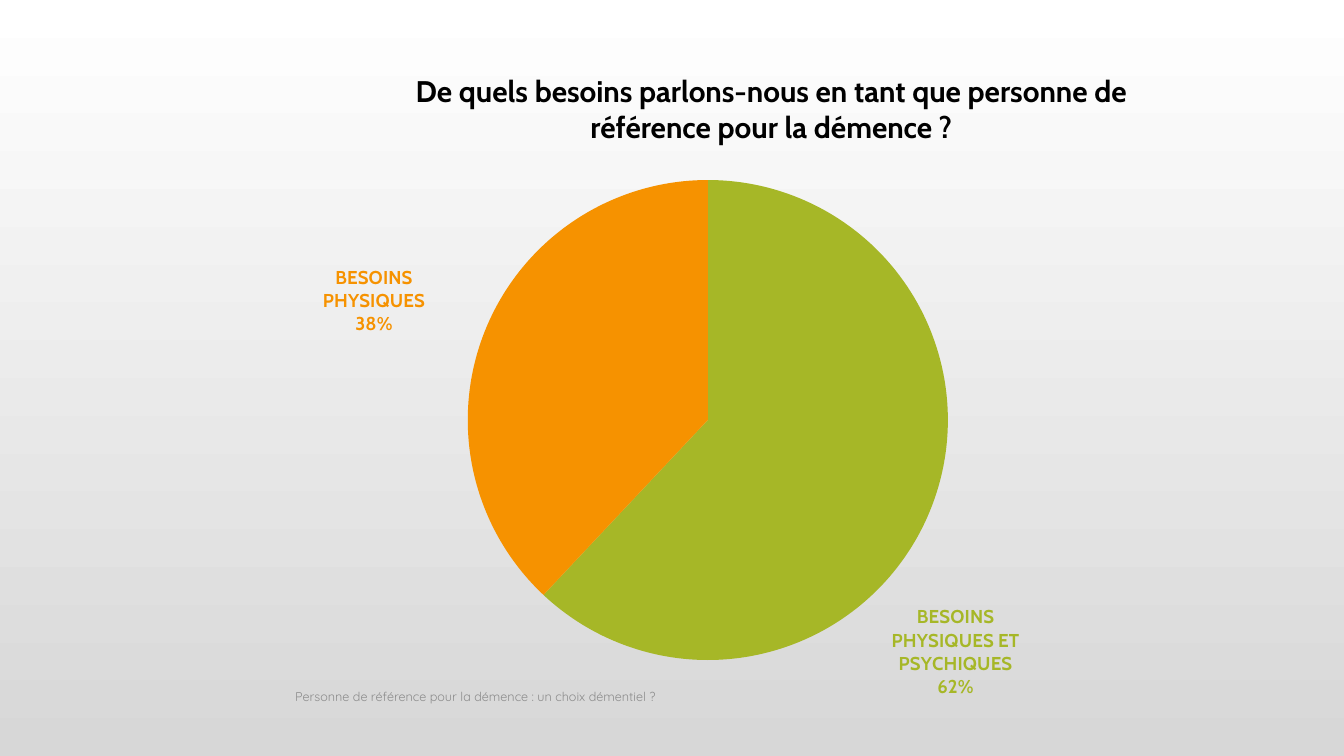
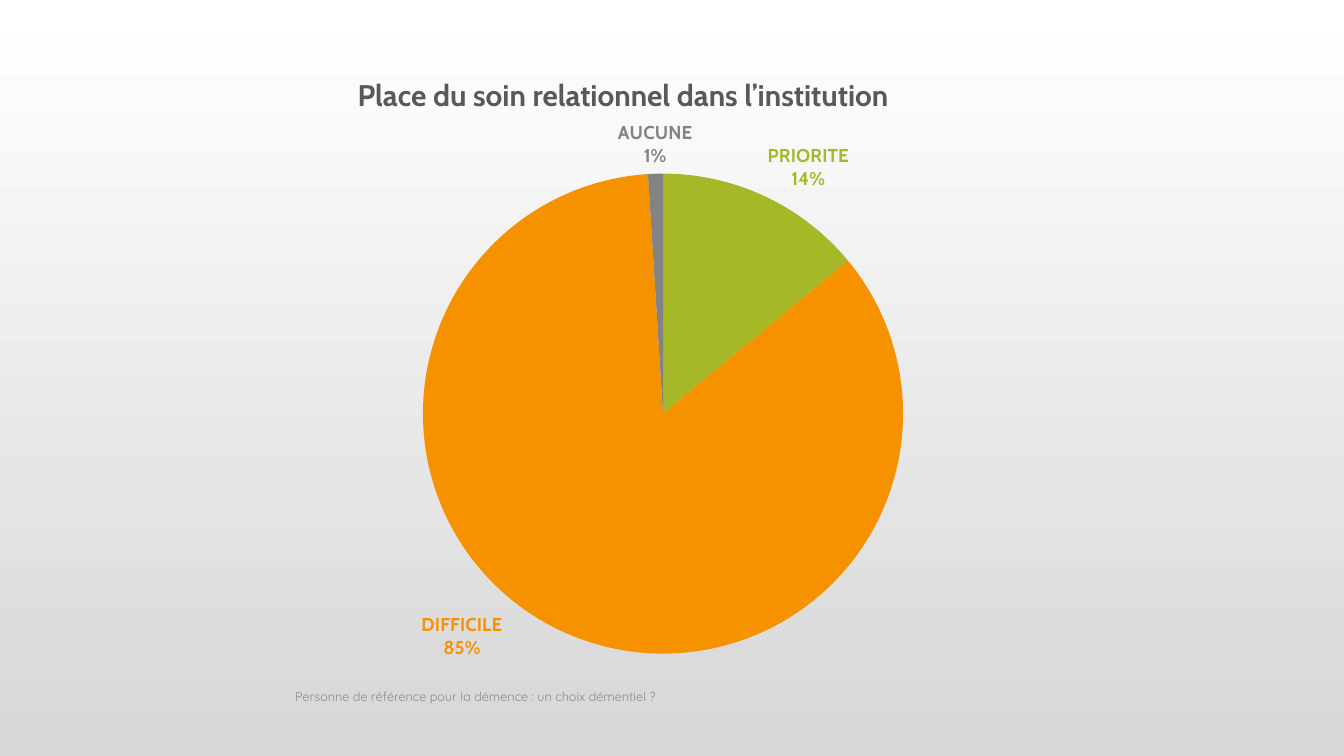
from dataclasses import dataclass

from lxml import etree
from pptx import Presentation
from pptx import util as u
from pptx.chart.data import CategoryChartData
from pptx.dml.color import RGBColor
from pptx.enum import chart as ch, text
from pptx.oxml.ns import qn


@dataclass(frozen=True)
class Theme:
    heading: str = "Cabin"
    body: str = "Quicksand"
    black: str = "000000"
    dark: str = "595959"
    muted: str = "8C8C8C"
    slices: tuple = ("A6B727", "F69200", "838383")
    background: tuple = ("FFFFFF", "D7D7D7")
    title_size: float = 21.3
    label_size: float = 13.3
    chart_size: float = 10
    footer_size: float = 9


T = Theme()
CHART_BOX = (2.22, 0.58, 8.89, 6.35)
FOOTER_BOX = (2.83, 6.71, 8.33, 0.4)
FOOTER = "Personne de référence pour la démence : un choix démentiel ?"
PLOT_SIZE = (0.84, 0.75)

# Each slice: category, value, label offset as fractions of the chart (None = automatic)
SLIDES = [
    dict(
        title="De quels besoins parlons-nous en tant que personne de référence pour la démence ?",
        title_box=(4.05, 0.72, 7.2, 0.8),
        title_color=T.black,
        plot_at=(0.12, 0.19),
        slices=[
            ("BESOINS PHYSIQUES ET PSYCHIQUES", 62, (-0.05, 0.15)),
            ("BESOINS PHYSIQUES", 38, (-0.06, 0.01)),
        ],
    ),
    dict(
        title="Place du soin relationnel dans l’institution",
        title_box=(2.58, 0.76, 7.2, 0.4),
        title_color=T.dark,
        plot_at=(0.07, 0.18),
        slices=[
            ("PRIORITE", 14, None),
            ("DIFFICILE", 85, (-0.07, -0.04)),
            ("AUCUNE", 1, None),
        ],
    ),
]


def inches(box):
    return [u.Inches(v) for v in box]


def style_font(font, name, size, color, bold=False):
    font.name, font.size, font.bold = name, u.Pt(size), bold
    font.color.rgb = RGBColor.from_string(color)


def set_background(master):
    fill = master.background.fill
    fill.gradient()
    fill.gradient_angle = 270
    for stop, color in zip(fill.gradient_stops, T.background):
        stop.color.rgb = RGBColor.from_string(color)


def fill_text(sp, box, content, anchor, align, **font):
    sp.left, sp.top, sp.width, sp.height = inches(box)
    tf = sp.text_frame
    tf.word_wrap = True
    tf.auto_size = text.MSO_AUTO_SIZE.NONE
    tf.vertical_anchor = anchor
    p = tf.paragraphs[0]
    p.alignment = align
    r = p.add_run()
    r.text = content
    style_font(r.font, **font)
    return tf


def add_title(s, content, box, color):
    tf = fill_text(s.shapes.title, box, content, text.MSO_ANCHOR.TOP, text.PP_ALIGN.CENTER,
                   name=T.heading, size=T.title_size, color=color, bold=True)
    tf.margin_left = tf.margin_right = tf.margin_top = tf.margin_bottom = 0


def add_footer(s, box):
    fill_text(s.shapes.add_textbox(*inches(box)), box, FOOTER,
              text.MSO_ANCHOR.MIDDLE, text.PP_ALIGN.LEFT,
              name=T.body, size=T.footer_size, color=T.muted)


def manual_layout(**values):
    layout = etree.Element(qn("c:layout"))
    manual = etree.SubElement(layout, qn("c:manualLayout"))
    for tag, value in values.items():
        etree.SubElement(manual, qn(f"c:{tag}")).set("val", str(value))
    return layout


def place_plot(chart, at):
    area = chart.element.find(".//" + qn("c:plotArea"))
    for old in area.findall(qn("c:layout")):
        area.remove(old)
    area.insert(0, manual_layout(layoutTarget="inner", xMode="edge", yMode="edge",
                                 x=at[0], y=at[1], w=PLOT_SIZE[0], h=PLOT_SIZE[1]))


def finish_labels(chart, offsets):
    """Show category over percentage, shift labels and drop leader lines."""
    for label, offset in zip(chart.element.iter(qn("c:dLbl")), offsets):
        for tag, value in (("showVal", "0"), ("showCatName", "1"), ("showPercent", "1")):
            label.find(qn(f"c:{tag}")).set("val", value)
        etree.SubElement(label, qn("c:separator")).text = "\n"
        if offset:
            label.insert(1, manual_layout(x=offset[0], y=offset[1]))
    for lines in chart.element.iter(qn("c:showLeaderLines")):
        lines.set("val", "0")


def add_pie(s, box, slices, plot_at):
    names, values, offsets = zip(*slices)
    data = CategoryChartData()
    data.categories = ["", *names]
    data.add_series("Series 1", [None, *values])
    chart = s.shapes.add_chart(ch.XL_CHART_TYPE.PIE, *inches(box), data).chart
    chart.has_title = chart.has_legend = False
    style_font(chart.font, T.body, T.chart_size, T.black)
    plot = chart.plots[0]
    plot.vary_by_categories = True
    for i, color in enumerate(T.slices[:len(slices)], start=1):
        point = plot.series[0].points[i]
        point.format.fill.solid()
        point.format.fill.fore_color.rgb = RGBColor.from_string(color)
        point.format.line.fill.background()
        style_font(point.data_label.font, T.heading, T.label_size, color, bold=True)
        point.data_label.position = ch.XL_LABEL_POSITION.OUTSIDE_END
    place_plot(chart, plot_at)
    finish_labels(chart, offsets)


def add_pie_slide(prs, title, title_box, title_color, plot_at, slices):
    s = prs.slides.add_slide(prs.slide_layouts[5])
    add_title(s, title, title_box, title_color)
    add_pie(s, CHART_BOX, slices, plot_at)
    add_footer(s, FOOTER_BOX)


def main():
    prs = Presentation()
    prs.slide_width, prs.slide_height = u.Inches(13.33), u.Inches(7.5)
    set_background(prs.slide_master)
    for content in SLIDES:
        add_pie_slide(prs, **content)
    prs.save("out.pptx")


if __name__ == "__main__":
    main()
